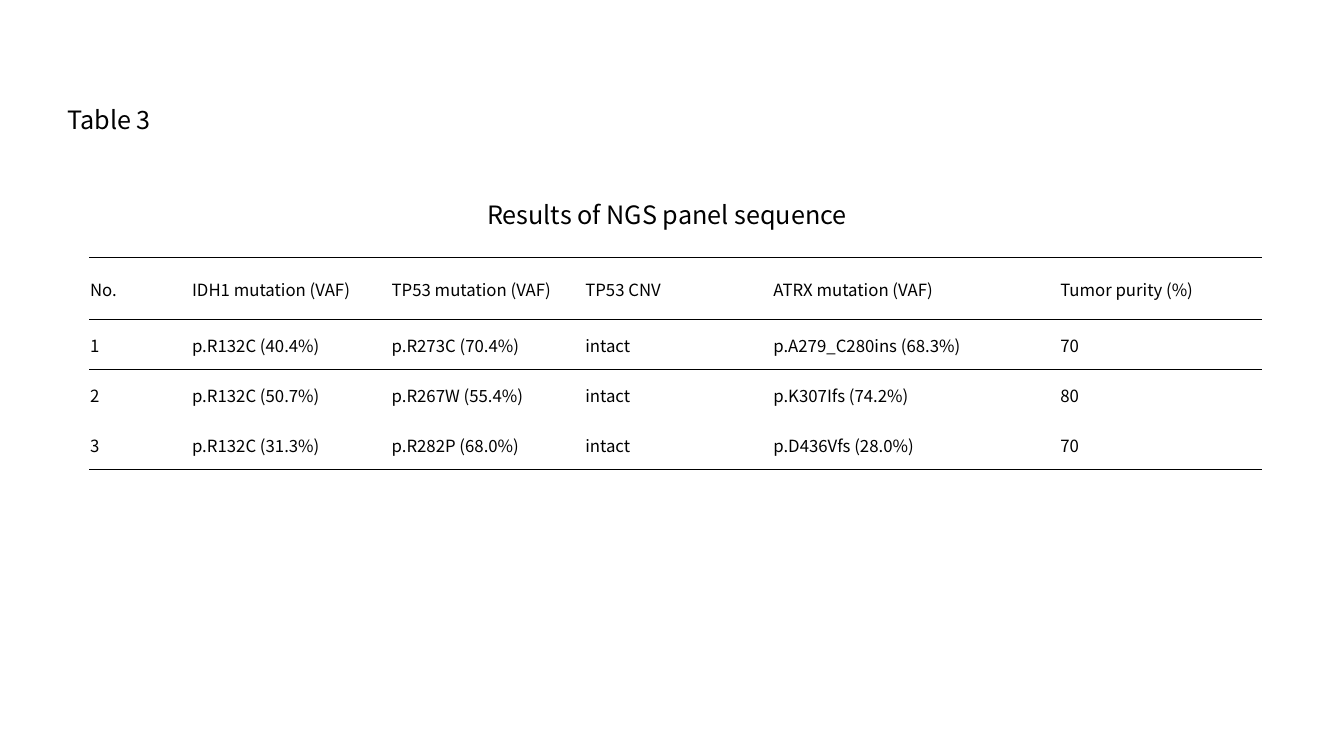
from dataclasses import dataclass

from lxml.etree import SubElement
from pptx import Presentation
from pptx.dml.color import RGBColor
from pptx.enum.text import MSO_ANCHOR as Anchor, MSO_AUTO_SIZE as Fit, PP_ALIGN as Align
from pptx.oxml.ns import qn
from pptx.shapes.base import BaseShape
from pptx.table import Table, _Cell as Cell
from pptx.text.text import TextFrame
from pptx.util import Cm, Pt


@dataclass(frozen=True)
class Theme:
    font: str = "Noto Sans CJK JP"
    ink: str = "000000"
    head: int = 18
    body: int = 12
    rule: float = 0.5


@dataclass(frozen=True)
class Label:
    text: str
    left: float
    top: float
    width: float
    height: float
    wrap: bool


@dataclass(frozen=True)
class Column:
    width: float
    head: str
    vals: tuple[str, ...]


THEME = Theme()
NO_GRID = "{2D5ABB26-0587-4C30-8999-92F81FD0307C}"
HEAD_H, BODY_H = 1.56, 1.26

NUMBER = Label("Table 3", 1.45, 2.5, 2.71, 1.03, False)
TITLE = Label("Results of NGS panel sequence", 12.02, 4.89, 9.82, 1.03, True)

COLUMNS = (
    Column(2.57, "No.", ("1", "2", "3")),
    Column(5.03, "IDH1 mutation (VAF)",
           ("p.R132C (40.4%)", "p.R132C (50.7%)", "p.R132C (31.3%)")),
    Column(4.88, "TP53 mutation (VAF)",
           ("p.R273C (70.4%)", "p.R267W (55.4%)", "p.R282P (68.0%)")),
    Column(4.74, "TP53 CNV", ("intact", "intact", "intact")),
    Column(7.23, "ATRX mutation (VAF)",
           ("p.A279_C280ins (68.3%)", "p.K307Ifs (74.2%)", "p.D436Vfs (28.0%)")),
    Column(5.1, "Tumor purity (%)", ("70", "80", "70")),
)


def write(frame: TextFrame, text: str, size: int) -> None:
    frame.text = text
    para = frame.paragraphs[0]
    para.alignment = Align.LEFT
    font = para.runs[0].font
    font.name = THEME.font
    font.size = Pt(size)
    font.color.rgb = RGBColor.from_string(THEME.ink)


def place(shape: BaseShape, label: Label) -> None:
    """Move a text shape to its label's spot and fill in the words."""
    shape.left, shape.top = Cm(label.left), Cm(label.top)
    shape.width, shape.height = Cm(label.width), Cm(label.height)
    frame = shape.text_frame
    write(frame, label.text, THEME.head)
    frame.paragraphs[0].line_spacing = 1.0
    frame.word_wrap = label.wrap
    frame.auto_size = Fit.SHAPE_TO_FIT_TEXT
    frame.vertical_anchor = Anchor.TOP


def rule(cell: Cell, edge: str) -> None:
    """Draw a line on one edge of a cell: lnT or lnB."""
    props = cell._tc.get_or_add_tcPr()
    line = SubElement(props, qn(f"a:{edge}"), w=str(Pt(THEME.rule)))
    fill = SubElement(line, qn("a:solidFill"))
    SubElement(fill, qn("a:srgbClr"), val=THEME.ink)


def fill_cell(cell: Cell, text: str, edges: tuple[str, ...]) -> None:
    write(cell.text_frame, text, THEME.body)
    cell.vertical_anchor = Anchor.MIDDLE
    cell.margin_left = cell.margin_right = cell.margin_top = Cm(0.02)
    cell.margin_bottom = 0
    for edge in edges:
        rule(cell, edge)
    cell.fill.background()


def fill_table(table: Table) -> None:
    table.first_row = table.horz_banding = False
    table._tbl.tblPr.find(qn("a:tableStyleId")).text = NO_GRID
    last = len(table.rows) - 1
    edges = {0: ("lnT", "lnB"), 1: ("lnT",), last: ("lnB",)}
    for r, row in enumerate(table.rows):
        row.height = Cm(BODY_H if r else HEAD_H)
    for c, col in enumerate(COLUMNS):
        table.columns[c].width = Cm(col.width)
        for r, text in enumerate((col.head, *col.vals)):
            fill_cell(table.cell(r, c), text, edges.get(r, ()))


def main() -> None:
    deck = Presentation()
    deck.slide_width, deck.slide_height = Cm(33.87), Cm(19.05)
    slide = deck.slides.add_slide(deck.slide_layouts[5])
    place(slide.shapes.title, TITLE)
    place(slide.shapes.add_textbox(0, 0, 0, 0), NUMBER)

    count = len(COLUMNS[0].vals)
    width = sum(col.width for col in COLUMNS)
    grid = slide.shapes.add_table(count + 1, len(COLUMNS), Cm(2.25), Cm(6.49),
                                  Cm(width), Cm(HEAD_H + count * BODY_H))
    fill_table(grid.table)
    deck.save("out.pptx")


if __name__ == "__main__":
    main()
